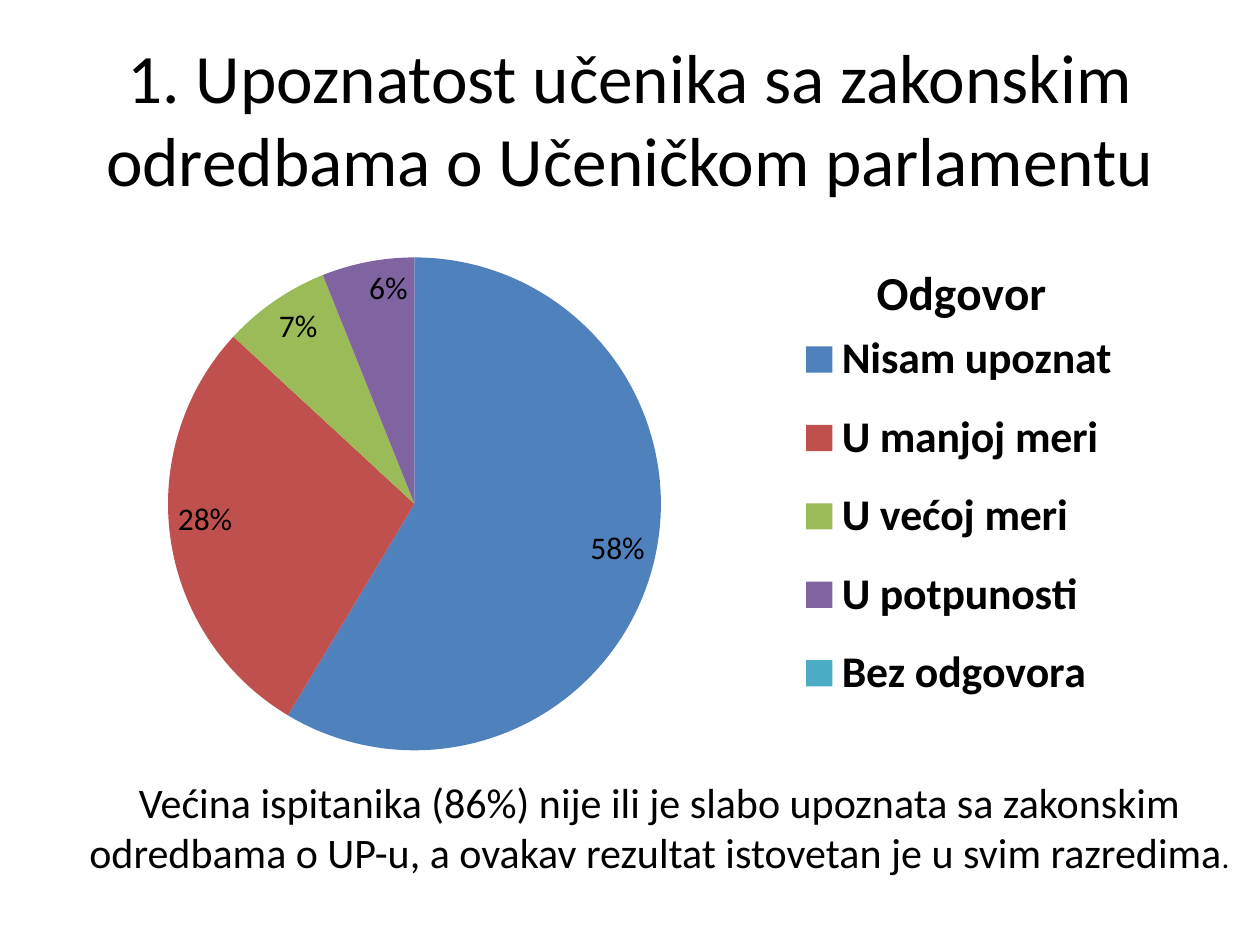
from dataclasses import dataclass
from lxml import etree
from pptx import Presentation
from pptx import util as u
from pptx.chart.data import CategoryChartData
from pptx.dml.color import RGBColor
from pptx.enum import chart as ch, text
from pptx.oxml.ns import qn

PX = 914400 // 126  # EMU in one px


@dataclass(frozen=True)
class Theme:
    face: str = "Calibri"
    ink: str = "000000"
    slices: tuple = ("4F81BD", "C0504D", "9BBB59", "8064A2", "4BACC6")
    head: float = 39.6
    title: float = 27
    key: float = 25
    body: float = 24
    small: float = 18


THEME = Theme()
VOTES = {
    "Nisam upoznat": 58,
    "U manjoj meri": 28,
    "U većoj meri": 7,
    "U potpunosti": 6,
    "Bez odgovora": 0,
}


def style(font, size, bold=False):
    form = {"name": THEME.face, "size": u.Pt(size), "bold": bold}
    for key, val in form.items():
        setattr(font, key, val)
    font.color.rgb = RGBColor.from_string(THEME.ink)


def add_text(slide, box, runs, anchor):
    """Centred paragraph of (wording, size) runs."""
    frame = slide.shapes.add_textbox(*(n * PX for n in box)).text_frame
    form = {"word_wrap": True, "vertical_anchor": anchor}
    for key, val in form.items():
        setattr(frame, key, val)
    para = frame.paragraphs[0]
    para.alignment = text.PP_ALIGN.CENTER
    for words, size in runs:
        run = para.add_run()
        run.text = words
        style(run.font, size)


def place(node, index, inner=False, **spot):
    """Give a chart part a fixed place, in fractions of the chart."""
    for old in node.findall(qn("c:layout")):
        node.remove(old)
    layout = etree.Element(qn("c:layout"))
    node.insert(index, layout)
    manual = etree.SubElement(layout, qn("c:manualLayout"))
    tags = {"layoutTarget": "inner"} if inner else {}
    tags |= {"xMode": "edge", "yMode": "edge"} | spot
    for tag, val in tags.items():
        etree.SubElement(manual, qn("c:" + tag)).set("val", str(val))


def add_pie(slide, box, name, votes):
    data = CategoryChartData()
    data.categories = list(votes)
    data.add_series(name, list(votes.values()))
    chart = slide.shapes.add_chart(
        ch.XL_CHART_TYPE.PIE, *(n * PX for n in box), data).chart
    style(chart.font, THEME.small)

    # Title above the legend
    chart.has_title = True
    title = chart.chart_title
    title.include_in_layout = False
    title.text_frame.text = name
    style(title.text_frame.paragraphs[0].runs[0].font, THEME.title, True)
    place(title._element, 1, x=0.71, y=0.05)

    # Legend
    chart.has_legend = True
    key = chart.legend
    key.position = ch.XL_LEGEND_POSITION.RIGHT
    key.include_in_layout = False
    style(key.font, THEME.key, True)
    place(key._element, 1, x=0.64, y=0.14, w=0.3, h=0.67)

    # Slices and their labels; a zero gets no label
    plot = chart.plots[0]
    plot.vary_by_categories = True
    for i, tint in enumerate(THEME.slices):
        fill = plot.series[0].points[i].format.fill
        fill.solid()
        fill.fore_color.rgb = RGBColor.from_string(tint)
    plot.has_data_labels = True
    form = {
        "show_value": True,
        "show_percentage": False,
        "number_format": '0"%";;',
        "number_format_is_linked": False,
        "position": ch.XL_LABEL_POSITION.INSIDE_END,
    }
    for key, val in form.items():
        setattr(plot.data_labels, key, val)
    style(plot.data_labels.font, THEME.small)
    area = chart._chartSpace.find(".//" + qn("c:plotArea"))
    place(area, 0, True, x=0.09, y=0.06, w=0.44, h=0.79)


def main():
    prs = Presentation()
    prs.slide_width, prs.slide_height = u.Inches(10), u.Inches(7.5)
    slide = prs.slides.add_slide(prs.slide_layouts[6])

    # Heading
    add_text(slide, (63, 38, 1134, 158), [
        ("1. Upoznatost učenika sa zakonskim odredbama "
         "o Učeničkom parlamentu", THEME.head)], text.MSO_ANCHOR.MIDDLE)

    # Answers
    add_pie(slide, (63, 220, 1134, 624), "Odgovor", VOTES)

    # Finding
    add_text(slide, (74, 770, 1171, 115), [
        ("Većina ispitanika (86%) nije ili je slabo upoznata sa zakonskim "
         "odredbama o UP-u, a ovakav rezultat istovetan je u svim razredima",
         THEME.body),
        (".", THEME.small)], text.MSO_ANCHOR.TOP)

    prs.save("out.pptx")


if __name__ == "__main__":
    main()
